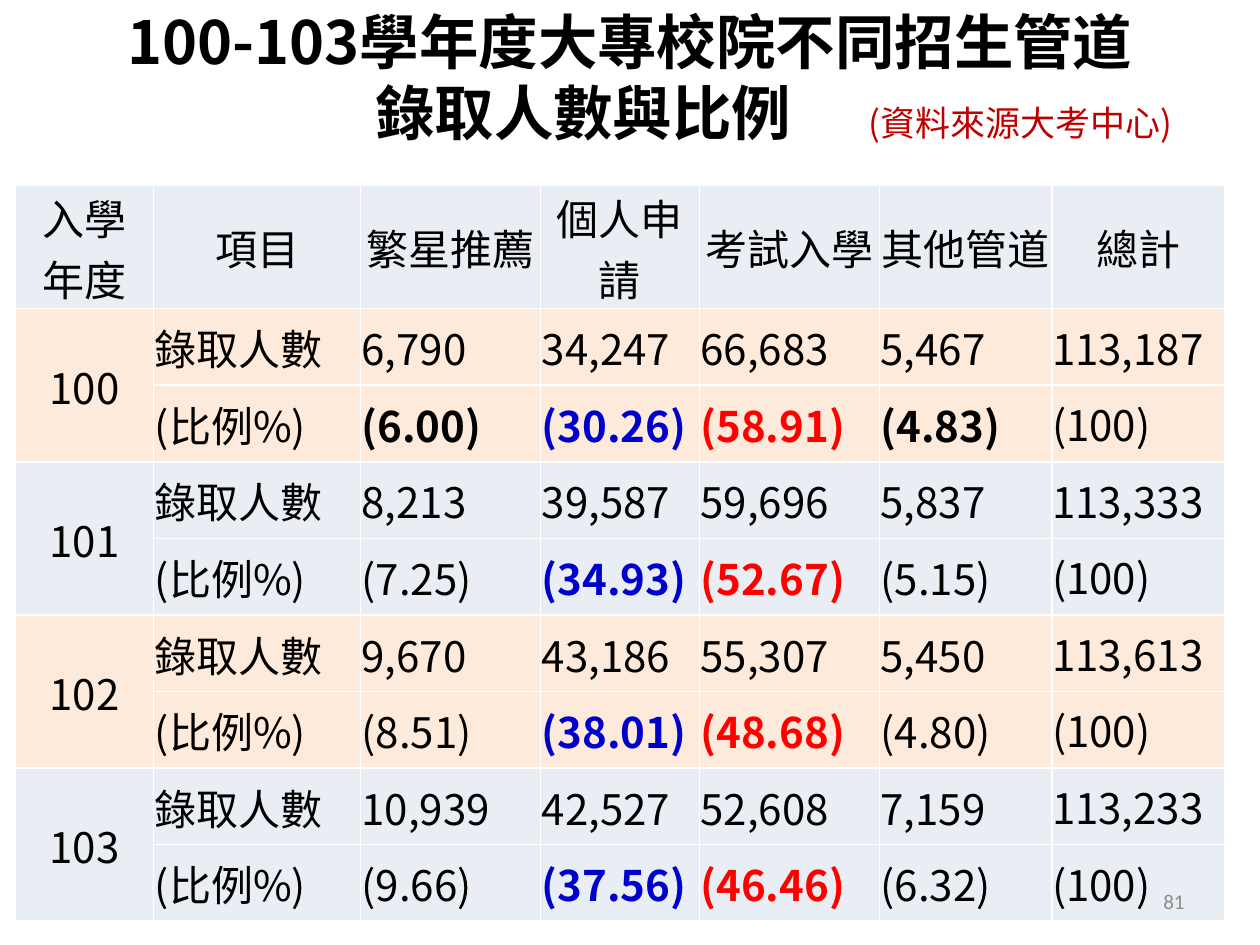
"""Build the slide on admissions by channel for academic years 100 to 103."""
from typing import NamedTuple

from lxml import etree
from pptx import Presentation
from pptx.dml.color import RGBColor
from pptx.enum.text import MSO_ANCHOR, PP_ALIGN
from pptx.oxml.ns import qn
from pptx.util import Inches, Pt

LEFT, CENTER, RIGHT = PP_ALIGN.LEFT, PP_ALIGN.CENTER, PP_ALIGN.RIGHT
MIDDLE = MSO_ANCHOR.MIDDLE
CJK_FONT = "Noto Sans CJK SC"
COLORS = {
    "text": "000000", "source": "C00000", "page": "8C8C8C", "apply": "0000CC",
    "exam": "FF0000", "blue band": "E9EDF4", "orange band": "FDEADA", "border": "FFFFFF",
}
HEADINGS = ["入學\n年度", "項目", "繁星推薦", "個人申請", "考試入學", "其他管道", "總計"]
COLUMN_WIDTHS = [1.1, 1.64, 1.43, 1.26, 1.43, 1.37, 1.37]
TABLE_HEIGHT, HEADING_HEIGHT = 5.84, 0.98
APPLY_COLUMN, EXAM_COLUMN, TOTAL_COLUMN = 3, 4, 6


class AdmissionYear(NamedTuple):
    year: str
    counts: list[str]
    shares: list[str]
    band: str
    bold_shares: bool = False


YEARS = [
    AdmissionYear("100", ["6,790", "34,247", "66,683", "5,467", "113,187"],
                  ["6.00", "30.26", "58.91", "4.83", "100"], "orange band", True),
    AdmissionYear("101", ["8,213", "39,587", "59,696", "5,837", "113,333"],
                  ["7.25", "34.93", "52.67", "5.15", "100"], "blue band"),
    AdmissionYear("102", ["9,670", "43,186", "55,307", "5,450", "113,613"],
                  ["8.51", "38.01", "48.68", "4.80", "100"], "orange band"),
    AdmissionYear("103", ["10,939", "42,527", "52,608", "7,159", "113,233"],
                  ["9.66", "37.56", "46.46", "6.32", "100"], "blue band"),
]


def write_text(frame, text: str, *, size: float = 24, color: str = "text", bold: bool = False,
               align=LEFT, font: str = CJK_FONT) -> None:
    """Fill a text frame with one paragraph per line of text."""
    for number, line in enumerate(text.split("\n")):
        paragraph = frame.add_paragraph() if number else frame.paragraphs[0]
        paragraph.alignment = align
        run = paragraph.add_run()
        run.text = line
        run.font.size = Pt(size)
        run.font.bold = bold
        run.font.name = font
        run.font.color.rgb = RGBColor.from_string(COLORS[color])
        etree.SubElement(run.font._element, qn("a:ea")).set("typeface", font)


def add_label(slide, text: str, left: float, top: float, width: float, height: float, **style):
    """Add a wrapped, vertically centred text box and return its frame."""
    frame = slide.shapes.add_textbox(
        Inches(left), Inches(top), Inches(width), Inches(height)).text_frame
    frame.word_wrap = True
    frame.vertical_anchor = MIDDLE
    write_text(frame, text, **style)
    return frame


def format_cell(cell, band: str, inset: float) -> None:
    """Give a cell its borders, fill, margins and anchor."""
    properties = cell._tc.get_or_add_tcPr()
    for side in ("lnL", "lnR", "lnT", "lnB"):
        border = etree.SubElement(properties, qn(f"a:{side}"), w=str(Pt(1)))
        fill = etree.SubElement(border, qn("a:solidFill"))
        etree.SubElement(fill, qn("a:srgbClr"), val=COLORS["border"])
    cell.fill.solid()
    cell.fill.fore_color.rgb = RGBColor.from_string(COLORS[band])
    cell.margin_left = cell.margin_right = cell.margin_top = Inches(inset)
    cell.margin_bottom = 0
    cell.vertical_anchor = MIDDLE


def add_admissions_table(slide) -> None:
    """Add the table with two rows, counts and shares, for each year."""
    row_count = 1 + 2 * len(YEARS)
    table = slide.shapes.add_table(
        row_count, len(HEADINGS), Inches(0.12), Inches(1.47),
        Inches(sum(COLUMN_WIDTHS)), Inches(TABLE_HEIGHT)).table
    table.first_row = table.horz_banding = False
    for column, width in zip(table.columns, COLUMN_WIDTHS):
        column.width = Inches(width)
    for row in table.rows:
        row.height = Inches((TABLE_HEIGHT - HEADING_HEIGHT) / (row_count - 1))
    table.rows[0].height = Inches(HEADING_HEIGHT)

    bands = ["blue band"] + [year.band for year in YEARS for _ in range(2)]
    for row, band in enumerate(bands):
        for column in range(len(HEADINGS)):
            format_cell(table.cell(row, column), band, 0 if column == TOTAL_COLUMN else 0.01)

    for column, heading in enumerate(HEADINGS):
        write_text(table.cell(0, column).text_frame, heading, align=CENTER)
    highlights = {APPLY_COLUMN: "apply", EXAM_COLUMN: "exam"}
    for index, year in enumerate(YEARS):
        top = 1 + 2 * index
        table.cell(top, 0).merge(table.cell(top + 1, 0))
        write_text(table.cell(top, 0).text_frame, year.year, align=CENTER)
        for column, count in enumerate(["錄取人數", *year.counts], 1):
            write_text(table.cell(top, column).text_frame, count)
        for column, share in enumerate(["比例%", *year.shares], 1):
            bold = column in highlights or (year.bold_shares and 1 < column < TOTAL_COLUMN)
            write_text(table.cell(top + 1, column).text_frame, f"({share})",
                       color=highlights.get(column, "text"), bold=bold)


def main() -> None:
    """Create the presentation and save it."""
    presentation = Presentation()
    presentation.slide_width, presentation.slide_height = Inches(10), Inches(7.5)
    slide = presentation.slides.add_slide(presentation.slide_layouts[6])
    title = add_label(slide, "100-103學年度大專校院不同招生管道\n錄取人數與比例", 0.5, 0.3, 9, 0.61,
                      size=34, bold=True, align=CENTER)
    second_line = title.paragraphs[1]
    second_line.alignment = LEFT
    second_line._p.get_or_add_pPr().set("marL", str(Inches(2.38)))
    add_label(slide, "(資料來源大考中心)", 6.6, 0.75, 3, 0.44,
              size=20, color="source", align=CENTER)
    add_admissions_table(slide)
    add_label(slide, "81", 7.17, 6.95, 2.33, 0.4,
              size=12, color="page", align=RIGHT, font="Calibri")
    presentation.save("out.pptx")


if __name__ == "__main__":
    main()
